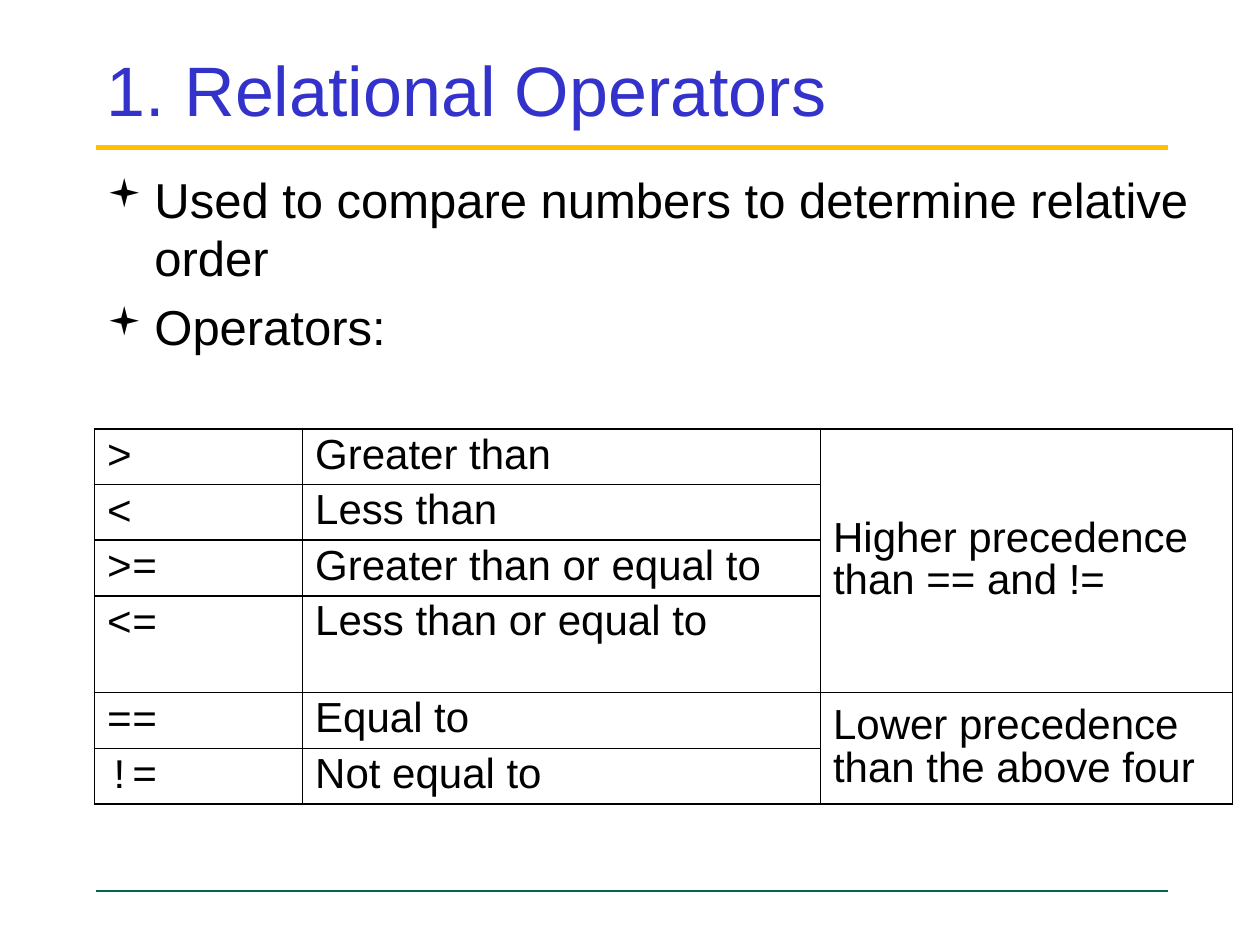
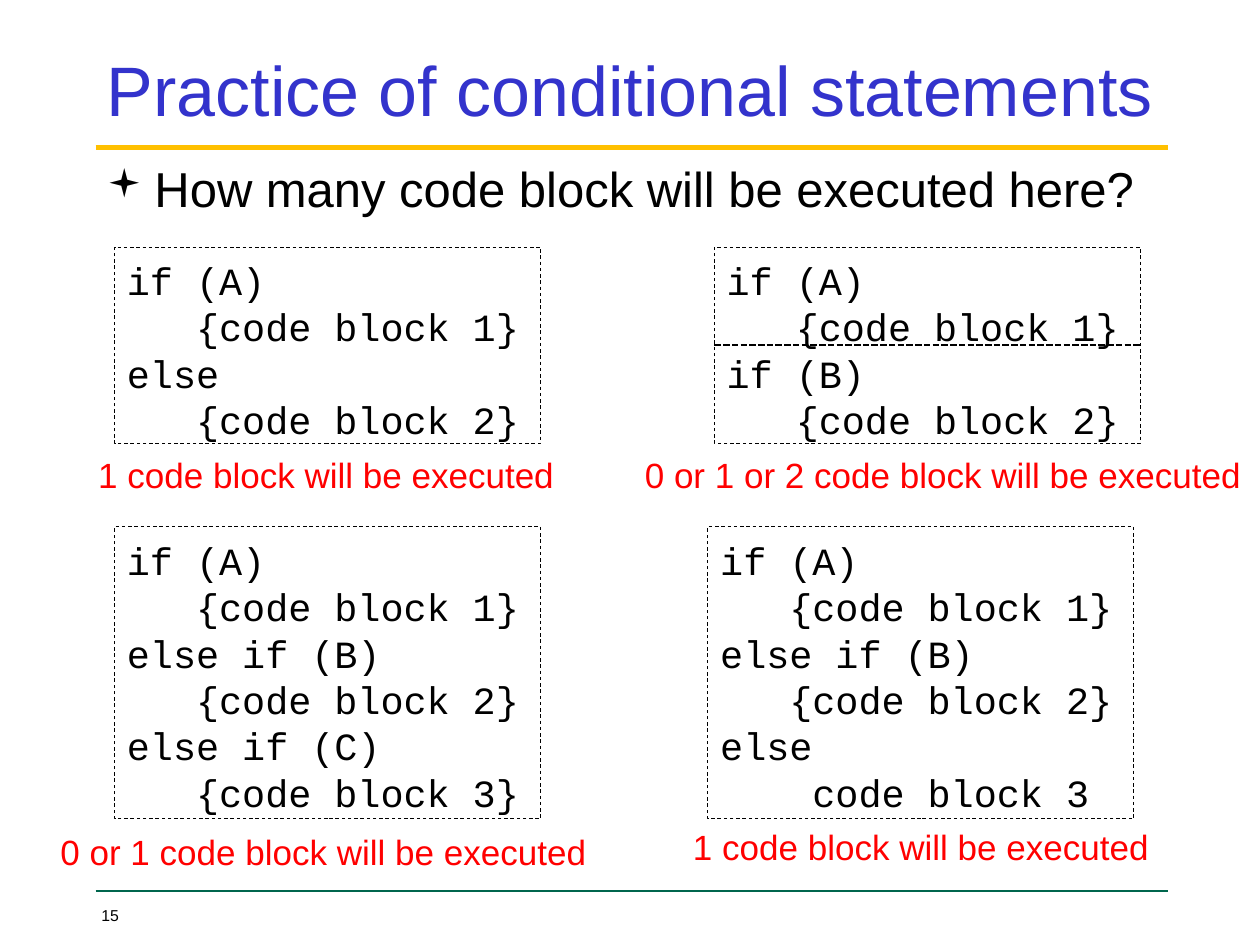
from lxml.etree import SubElement
from pptx import Presentation
from pptx.dml.color import RGBColor
from pptx.enum.dml import MSO_LINE
from pptx.enum.shapes import MSO_CONNECTOR, MSO_SHAPE
from pptx.enum.text import MSO_ANCHOR, MSO_AUTO_SIZE, PP_ALIGN
from pptx.oxml.ns import qn
from pptx.util import Cm, Pt

COLORS = {
    "title": "3333CC",
    "text": "000000",
    "title_rule": "FFC000",
    "footer_rule": "00664D",
    "answer": "FF0000",
}
SANS, MONO = "Arial", "Courier New"
LEFT = 1.9
RULE_LEFT, RULE_RIGHT = 1.93, 23.55
BULLET_INDENT = Cm(0.96)
CODE_WIDTH = 8.59

OPERATORS = [
    (">", "Greater than"),
    ("<", "Less than"),
    (">=", "Greater than or equal to"),
    ("<=", "Less than or equal to"),
    ("==", "Equal to"),
    ("!=", "Not equal to"),
]
# First row, last row and text of each group of operators
PRECEDENCE = [
    (0, 3, "Higher precedence than == and !="),
    (4, 5, "Lower precedence than the above four"),
]
COLUMN_WIDTHS = [4.2, 10.44, 8.31]
ROW_HEIGHTS = [1.11, 1.11, 1.11, 1.93, 1.11, 1.11]


def rgb(name):
    return RGBColor.from_string(COLORS[name])


def place(shape, left, top, width, height):
    shape.left, shape.top = Cm(left), Cm(top)
    shape.width, shape.height = Cm(width), Cm(height)


def write(paragraph, text, size, color="text", font=SANS):
    run = paragraph.add_run()
    run.text = text
    run.font.size = Pt(size)
    run.font.name = font
    run.font.color.rgb = rgb(color)


def paragraphs(frame, lines):
    """Yield a paragraph of the frame for each line, with the line."""
    for index, line in enumerate(lines):
        yield (frame.add_paragraph() if index else frame.paragraphs[0]), line


def add_rule(slide, start, end, color, weight):
    rule = slide.shapes.add_connector(
        MSO_CONNECTOR.STRAIGHT, *(Cm(value) for value in (*start, *end)))
    rule.line.color.rgb = rgb(color)
    rule.line.width = Pt(weight)
    SubElement(rule._element.spPr, qn("a:effectLst"))
    return rule


def add_slide(deck, title, title_width=21.59):
    """Add a slide with the shared rules and title style."""
    slide = deck.slides.add_slide(deck.slide_layouts[1])
    for y, color, weight in ((2.97, "title_rule", 3), (17.96, "footer_rule", 0.75)):
        add_rule(slide, (RULE_LEFT, y), (RULE_RIGHT, y), color, weight)
    heading = slide.shapes.title
    place(heading, LEFT, 0.84, title_width, 1.9)
    frame = heading.text_frame
    frame.auto_size = MSO_AUTO_SIZE.NONE
    frame.vertical_anchor = MSO_ANCHOR.MIDDLE
    frame.paragraphs[0].alignment = PP_ALIGN.LEFT
    write(frame.paragraphs[0], title, 40, "title")
    return slide


def add_bullet(paragraph):
    properties = paragraph._p.get_or_add_pPr()
    properties.set("marL", str(BULLET_INDENT))
    properties.set("indent", str(-BULLET_INDENT))
    bullet_color = SubElement(properties, qn("a:buClr"))
    SubElement(bullet_color, qn("a:srgbClr"), val=COLORS["text"])
    SubElement(properties, qn("a:buSzPct"), val="80000")
    SubElement(properties, qn("a:buFont"), typeface="Wingdings")
    SubElement(properties, qn("a:buChar"), char="▪")


def fill_body(slide, points, top, width, height):
    body = slide.placeholders[1]
    place(body, LEFT, top, width, height)
    frame = body.text_frame
    frame.auto_size = MSO_AUTO_SIZE.NONE
    for paragraph, point in paragraphs(frame, points):
        add_bullet(paragraph)
        paragraph.space_before = Pt(0 if point == points[0] else 5.6)
        write(paragraph, point, 28)


def add_borders(cell):
    properties = cell._tc.get_or_add_tcPr()
    for side in ("lnL", "lnR", "lnT", "lnB"):
        border = SubElement(properties, qn(f"a:{side}"), w=str(Pt(1)))
        fill = SubElement(border, qn("a:solidFill"))
        SubElement(fill, qn("a:srgbClr"), val=COLORS["text"])


def write_cell(cell, text, font=SANS):
    paragraph = cell.text_frame.paragraphs[0]
    paragraph.line_spacing = 0.9
    write(paragraph, text, 24, font=font)


def add_operator_table(slide):
    table = slide.shapes.add_table(
        len(OPERATORS), len(COLUMN_WIDTHS), Cm(LEFT), Cm(8.65),
        Cm(sum(COLUMN_WIDTHS)), Cm(sum(ROW_HEIGHTS))).table
    table.first_row = table.horz_banding = False
    for column, width in zip(table.columns, COLUMN_WIDTHS):
        column.width = Cm(width)
    for row, height in zip(table.rows, ROW_HEIGHTS):
        row.height = Cm(height)
    for cell in table.iter_cells():
        add_borders(cell)
        cell.fill.background()
    for row, (operator, meaning) in enumerate(OPERATORS):
        write_cell(table.cell(row, 0), operator, MONO)
        write_cell(table.cell(row, 1), meaning)
    for first, last, note in PRECEDENCE:
        group = table.cell(first, 2)
        group.merge(table.cell(last, 2))
        group.vertical_anchor = MSO_ANCHOR.MIDDLE
        write_cell(group, note)


def add_code(slide, left, top, height, lines):
    code = slide.shapes.add_shape(
        MSO_SHAPE.RECTANGLE, Cm(left), Cm(top), Cm(CODE_WIDTH), Cm(height))
    code.shadow.inherit = False
    code.fill.background()
    code.line.color.rgb = rgb("text")
    code.line.width = Pt(0.5)
    code.line.dash_style = MSO_LINE.DASH
    frame = code.text_frame
    frame.word_wrap = True
    frame.vertical_anchor = MSO_ANCHOR.TOP
    frame.margin_top = Cm(0.2)
    for paragraph, line in paragraphs(frame, lines):
        paragraph.alignment = PP_ALIGN.LEFT
        paragraph.line_spacing = Pt(26.5)
        write(paragraph, line, 22, font=MONO)
    return code


def add_answer(slide, left, top, width, text):
    answer = slide.shapes.add_textbox(Cm(left), Cm(top), Cm(width), Cm(1.12))
    answer.text_frame.word_wrap = True
    write(answer.text_frame.paragraphs[0], text, 20, "answer")


def add_page_number(slide, number):
    page = slide.shapes.add_textbox(Cm(LEFT), Cm(18.21), Cm(0.64), Cm(0.43))
    frame = page.text_frame
    frame.margin_left = frame.margin_right = 0
    frame.margin_top = frame.margin_bottom = 0
    frame.vertical_anchor = MSO_ANCHOR.BOTTOM
    frame.paragraphs[0].alignment = PP_ALIGN.CENTER
    write(frame.paragraphs[0], number, 9)


def add_divider(slide, code):
    """Split a code box in two halves with a dashed line."""
    divider = add_rule(slide, (0, 0), (1, 0), "text", 1.25)
    divider.line.dash_style = MSO_LINE.SQUARE_DOT
    divider.begin_connect(code, 1)
    divider.end_connect(code, 3)


def build_operators(deck):
    slide = add_slide(deck, "1. Relational Operators")
    fill_body(slide, ["Used to compare numbers to determine relative order",
                      "Operators:"], 3.28, 22.96, 13.97)
    add_operator_table(slide)


def build_practice(deck):
    slide = add_slide(deck, "Practice of conditional statements", 22.81)
    fill_body(slide, ["How many code block will be executed here?"],
              3.07, 21.59, 1.9)
    add_page_number(slide, "15")

    block_1, block_2, block_3 = (f"   {{code block {n}}}" for n in (1, 2, 3))
    opening = ["if (A)", block_1]
    chain = opening + ["else if (B)", block_2]
    upper, lower = (4.98, 3.96), (10.62, 5.89)
    add_code(slide, 2.31, *upper, opening + ["else", block_2])
    separate_ifs = add_code(slide, 14.4, *upper, opening + ["if (B)", block_2])
    add_code(slide, 2.31, *lower, chain + ["else if (C)", block_3])
    add_code(slide, 14.27, *lower, chain + ["else", "    code block 3"])

    for left, top, width, count in (
            (1.73, 9.02, 9.98, "1"),
            (12.75, 9.02, 12.62, "0 or 1 or 2"),
            (0.97, 16.61, 11.2, "0 or 1"),
            (13.72, 16.51, 9.78, "1")):
        add_answer(slide, left, top, width, f"{count} code block will be executed")
    add_divider(slide, separate_ifs)


def main():
    deck = Presentation()
    deck.slide_width, deck.slide_height = Cm(25.4), Cm(19.05)
    build_operators(deck)
    build_practice(deck)
    deck.save("out.pptx")


if __name__ == "__main__":
    main()
